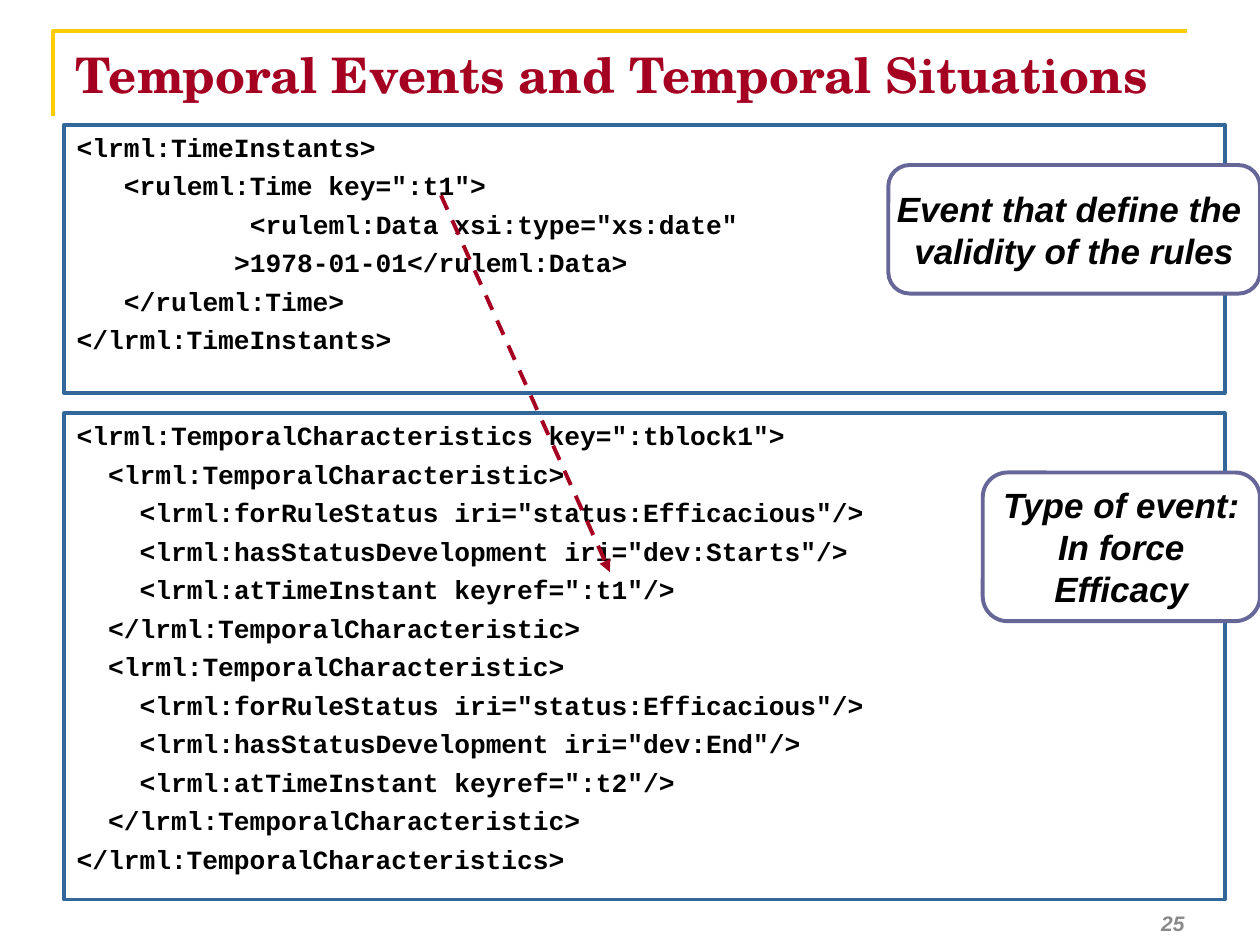
"""Build the slide on temporal events and temporal situations in LegalRuleML."""
from lxml import etree
from pptx import Presentation
from pptx.dml.color import RGBColor
from pptx.enum.dml import MSO_LINE
from pptx.enum.shapes import MSO_CONNECTOR, MSO_SHAPE
from pptx.enum.text import MSO_ANCHOR, PP_ALIGN
from pptx.oxml.ns import qn
from pptx.util import Inches, Pt

LEFT, CENTER, RIGHT = PP_ALIGN.LEFT, PP_ALIGN.CENTER, PP_ALIGN.RIGHT
TOP, MIDDLE = MSO_ANCHOR.TOP, MSO_ANCHOR.MIDDLE
RECT, ROUNDED = MSO_SHAPE.RECTANGLE, MSO_SHAPE.ROUNDED_RECTANGLE
STRAIGHT, DASH = MSO_CONNECTOR.STRAIGHT, MSO_LINE.DASH

GOLD = RGBColor(0xFF, 0xCC, 0x00)
CRIMSON = RGBColor(0xA5, 0x00, 0x21)
BLUE = RGBColor(0x33, 0x66, 0x99)
VIOLET = RGBColor(0x66, 0x66, 0x99)
GREY = RGBColor(0x89, 0x89, 0x89)
BLACK = RGBColor(0x00, 0x00, 0x00)
WHITE = RGBColor(0xFF, 0xFF, 0xFF)

STROKE = Pt(2.25)
CODE_CHARACTER = Inches(0.125)

deck = Presentation()
deck.slide_width, deck.slide_height = Inches(10), Inches(7.5)
COLUMN, ROW = deck.slide_width / 100, deck.slide_height / 75
slide = deck.slides.add_slide(deck.slide_layouts[6])
shapes = slide.shapes


def grid(*lengths):
    """Turn alternating columns and rows into slide lengths."""
    return [round(n * (ROW if i % 2 else COLUMN)) for i, n in enumerate(lengths)]


def write(shape, lines, font="Arial", size=20, color=BLACK, italic=False,
          align=LEFT, anchor=TOP, wrap=True, before=0):
    """Fill a shape with (indent in code characters, text) lines."""
    frame = shape.text_frame
    frame.word_wrap, frame.vertical_anchor = wrap, anchor
    for number, (indent, text) in enumerate(lines):
        paragraph = frame.add_paragraph() if number else frame.paragraphs[0]
        paragraph.alignment, paragraph.space_before = align, Pt(before)
        paragraph._p.get_or_add_pPr().set("marL", str(indent * CODE_CHARACTER))
        run = paragraph.add_run()
        run.text = text
        run.font.name, run.font.size = font, Pt(size)
        run.font.bold, run.font.italic = True, italic
        run.font.color.rgb = color


pen = shapes.build_freeform(*grid(4.2, 9.2))
pen.add_line_segments([grid(4.2, 2.5), grid(94.2, 2.5)], close=False)
title_corner = pen.convert_to_shape()
title_corner.shadow.inherit = False
title_corner.fill.background()
title_corner.line.color.rgb, title_corner.line.width = GOLD, STROKE

title = shapes.add_textbox(*grid(5, 3, 90, 12.5))
write(title, [(0, "Temporal Events and Temporal Situations")],
      font="TeX Gyre Schola", size=28, color=CRIMSON)

time_instants = [
    (0, "<lrml:TimeInstants>"),
    (3, '<ruleml:Time key=":t1">'),
    (11, '<ruleml:Data xsi:type="xs:date"'),
    (10, ">1978-01-01</ruleml:Data>"),
    (3, "</ruleml:Time>"),
    (0, "</lrml:TimeInstants>"),
]
characteristics = [(0, '<lrml:TemporalCharacteristics key=":tblock1">')]
for development, instant in (("Starts", "t1"), ("End", "t2")):
    characteristics += [
        (2, "<lrml:TemporalCharacteristic>"),
        (4, '<lrml:forRuleStatus iri="status:Efficacious"/>'),
        (4, f'<lrml:hasStatusDevelopment iri="dev:{development}"/>'),
        (4, f'<lrml:atTimeInstant keyref=":{instant}"/>'),
        (2, "</lrml:TemporalCharacteristic>"),
    ]
characteristics.append((0, "</lrml:TemporalCharacteristics>"))

for top, height, code in ((9.9, 21.3, time_instants), (32.8, 38.6, characteristics)):
    listing = shapes.add_shape(RECT, *grid(5.1, top, 92.1, height))
    listing.shadow.inherit = False
    listing.fill.background()
    listing.line.color.rgb, listing.line.width = BLUE, STROKE
    write(listing, code, font="Courier New", size=15, before=4)

key_reference = shapes.add_connector(STRAIGHT, *grid(35, 15.5, 48.4, 45.4))
key_reference.line.color.rgb, key_reference.line.width = CRIMSON, STROKE
key_reference.line.dash_style = DASH
etree.SubElement(key_reference.line._get_or_add_ln(), qn("a:tailEnd"), type="triangle")
etree.SubElement(key_reference._element.spPr, qn("a:effectLst"))

callouts = (
    (78, 37.5, 22, 11.8, ["Type of event:", "In force", "Efficacy"]),
    (70.5, 13.1, 29.5, 10.2, ["Event that define the ", "validity of the rules"]),
)
for *place, remarks in callouts:
    callout = shapes.add_shape(ROUNDED, *grid(*place))
    callout.shadow.inherit = False
    callout.fill.solid()
    callout.fill.fore_color.rgb = WHITE
    callout.line.color.rgb, callout.line.width = VIOLET, STROKE
    write(callout, [(0, remark) for remark in remarks], italic=True,
          align=CENTER, anchor=MIDDLE, wrap=False)

page_number = shapes.add_textbox(*grid(71.7, 71.3, 23.3, 4))
write(page_number, [(0, "25")], size=12, color=GREY, italic=True,
      align=RIGHT, anchor=MIDDLE)

deck.save("out.pptx")
